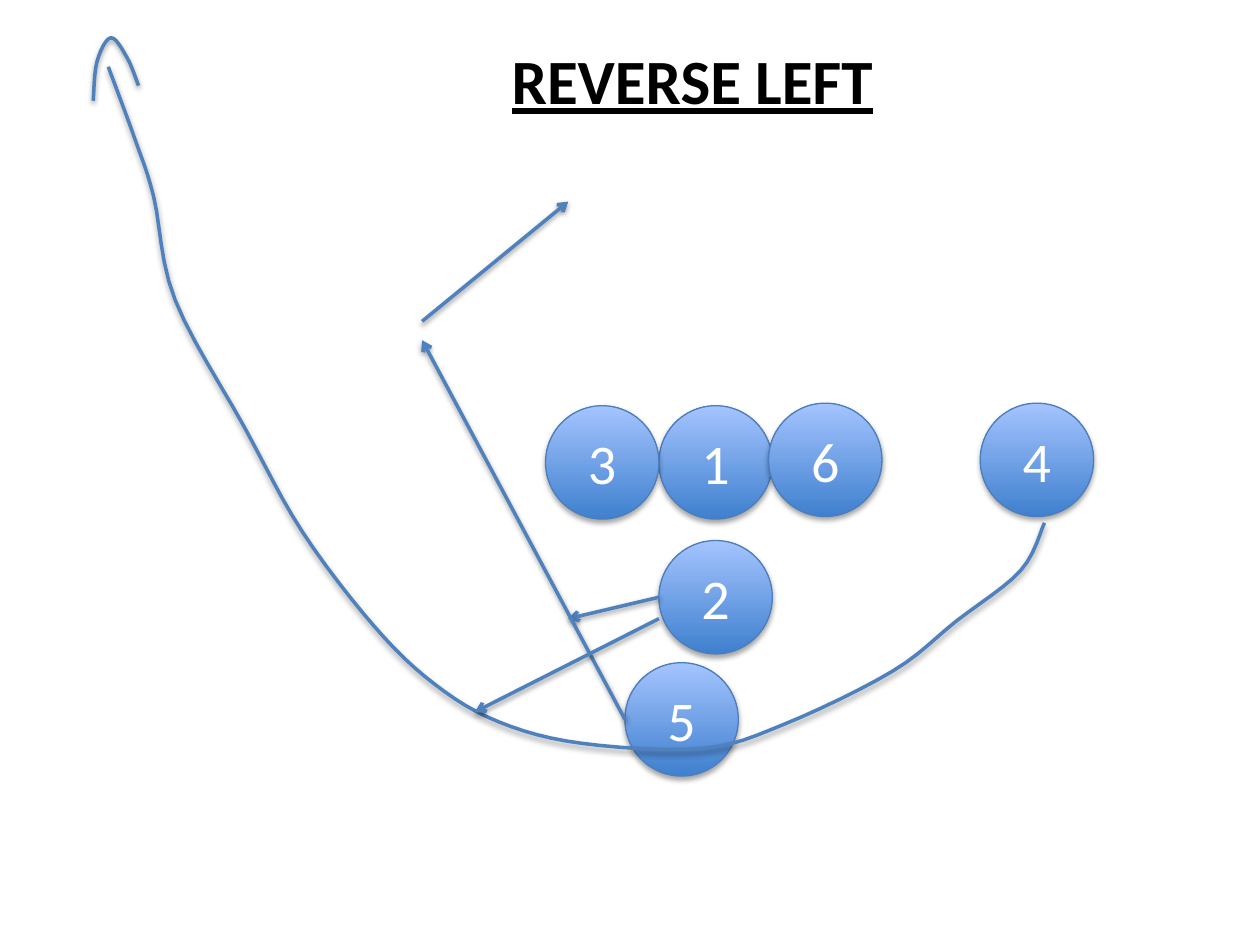
from lxml.etree import SubElement
from pptx import Presentation
from pptx.dml.color import RGBColor
from pptx.enum.shapes import MSO_CONNECTOR as Link, MSO_SHAPE as Preset
from pptx.enum.text import MSO_ANCHOR as Anchor, MSO_AUTO_SIZE as Fit, PP_ALIGN as Align
from pptx.oxml.ns import qn
from pptx.util import Cm, Pt

FONT = "Calibri"
GRID = Cm(0.0254)  # field positions count in this step
SIZE = 90          # diameter of a player
CURVE_STEPS = 6    # straight pieces between two waypoints

# Left and top of each player; 3 lines up touching 1, and 2 stands behind 1
CENTER, FRONT_ROW, WIDE_ROW = 523, 322, 320
PLAYERS = {
    "1": (CENTER, FRONT_ROW),
    "2": (CENTER, 429),
    "5": (496, 526),
    "4": (778, WIDE_ROW),
    "3": (CENTER - SIZE, FRONT_ROW),
    "6": (610, WIDE_ROW),
}
TOP_PLAYER = "6"  # overlaps its neighbour, so it is drawn last

# Waypoints of the sweep by player 4, one group for each stage
SWEEP_BACK = [(829, 415), (810, 453), (759, 493), (708, 533), (622, 575)]
SWEEP_ACROSS = [(557, 594), (462, 590), (396, 573), (345, 543), (297, 497)]
SWEEP_UPFIELD = [(240, 422), (194, 339), (139, 238), (122, 156), (107, 110), (86, 53)]
SWEEP = SWEEP_BACK + SWEEP_ACROSS + SWEEP_UPFIELD
SWEEP_HEAD = [(74, 80), (77, 49), (88, 30), (101, 46), (110, 68)]


def color(code):
    return RGBColor.from_string(code)


def add_shadow(shape, distance, opacity):
    effects = SubElement(shape._element.spPr, qn("a:effectLst"))
    outer = SubElement(effects, qn("a:outerShdw"), blurRad=str(Pt(3.1)),
                       dist=str(Pt(distance)), dir="5400000", rotWithShape="0")
    black = SubElement(outer, qn("a:srgbClr"), val="000000")
    SubElement(black, qn("a:alpha"), val=str(opacity * 1000))


def write(frame, text, size, code, align=Align.LEFT, bold=False, underline=False):
    para = frame.paragraphs[0]
    para.alignment = align
    span = para.add_run()
    span.text = text
    font = span.font
    font.name, font.size, font.color.rgb = FONT, Pt(size), color(code)
    font.bold, font.underline = bold, underline


def place(box, point):
    """Turn a field position into slide lengths."""
    return tuple(round(edge + value * GRID) for edge, value in zip(box, point))


def left_side(number, drop=0):
    """Middle of a player's left side, moved down by drop."""
    left, top = PLAYERS[number]
    return left, top + SIZE / 2 + drop


def blend(before, start, end, after, t):
    """Catmull-Rom value between start and end, for t from 0 to 1."""
    return (2 * start + (end - before) * t
            + (2 * before - 5 * start + 4 * end - after) * t ** 2
            + (3 * start - before - 3 * end + after) * t ** 3) / 2


def smooth_curve(waypoints):
    """Points of a smooth curve that passes through every waypoint."""
    padded = [waypoints[0], *waypoints, waypoints[-1]]
    points = [waypoints[0]]
    for corners in zip(padded, padded[1:], padded[2:], padded[3:]):
        for step in range(1, CURVE_STEPS + 1):
            points.append([blend(*values, step / CURVE_STEPS) for values in zip(*corners)])
    return points


def draw_title(page, box):
    title = page.shapes.title
    title.left, title.top, title.width, title.height = box
    frame = title.text_frame
    frame.word_wrap = False
    frame.auto_size = Fit.SHAPE_TO_FIT_TEXT
    frame.vertical_anchor = Anchor.TOP
    write(frame, "REVERSE LEFT", 36, "000000", bold=True, underline=True)


def draw_player(page, box, number):
    player = page.shapes.add_shape(Preset.OVAL, *place(box, PLAYERS[number]),
                                   SIZE * GRID, SIZE * GRID)
    player.fill.gradient()
    player.fill.gradient_angle = 90
    for stop, code in zip(player.fill.gradient_stops, ("3F80CE", "A4C4FF")):
        stop.color.rgb = color(code)
    player.line.color.rgb = color("4B7EBC")
    player.line.width = Pt(0.75)
    add_shadow(player, distance=1.8, opacity=35)
    player.text_frame.vertical_anchor = Anchor.MIDDLE
    write(player.text_frame, number, 32, "FFFFFF", align=Align.CENTER)


def style_route(route):
    route.line.color.rgb = color("4F81BD")
    route.line.width = Pt(2)
    add_shadow(route, distance=1.6, opacity=38)


def draw_move(page, box, start, end):
    move = page.shapes.add_connector(Link.STRAIGHT, *place(box, start), *place(box, end))
    style_route(move)
    SubElement(move.line._get_or_add_ln(), qn("a:tailEnd"), type="arrow")


def draw_run(page, box, waypoints):
    start, *rest = [place(box, point) for point in smooth_curve(waypoints)]
    builder = page.shapes.build_freeform(*start)
    builder.add_line_segments(rest, close=False)
    run = builder.convert_to_shape()
    run.fill.background()
    style_route(run)


def draw_field(page, box):
    # Players under the routes
    for number in PLAYERS:
        if number != TOP_PLAYER:
            draw_player(page, box, number)

    # Short fake by 2, then 5 runs upfield and cuts right
    draw_move(page, box, left_side("2"), (451, 491))
    draw_move(page, box, left_side("5"), (335, 270))
    draw_move(page, box, (335, 255), (451, 160))

    # Curved sweep and its hand-drawn arrowhead
    for waypoints in (SWEEP, SWEEP_HEAD):
        draw_run(page, box, waypoints)

    # 2 meets the sweep
    draw_move(page, box, left_side("2", drop=17), (377, 565))
    draw_player(page, box, TOP_PLAYER)


def main():
    deck = Presentation()
    deck.slide_width, deck.slide_height = Cm(25.4), Cm(19.05)
    page = deck.slides.add_slide(deck.slide_layouts[5])
    draw_title(page, (Cm(10.06), Cm(0.71), Cm(7.9), Cm(1.8)))
    draw_field(page, (0, 0, deck.slide_width, deck.slide_height))
    deck.save("out.pptx")


if __name__ == "__main__":
    main()
